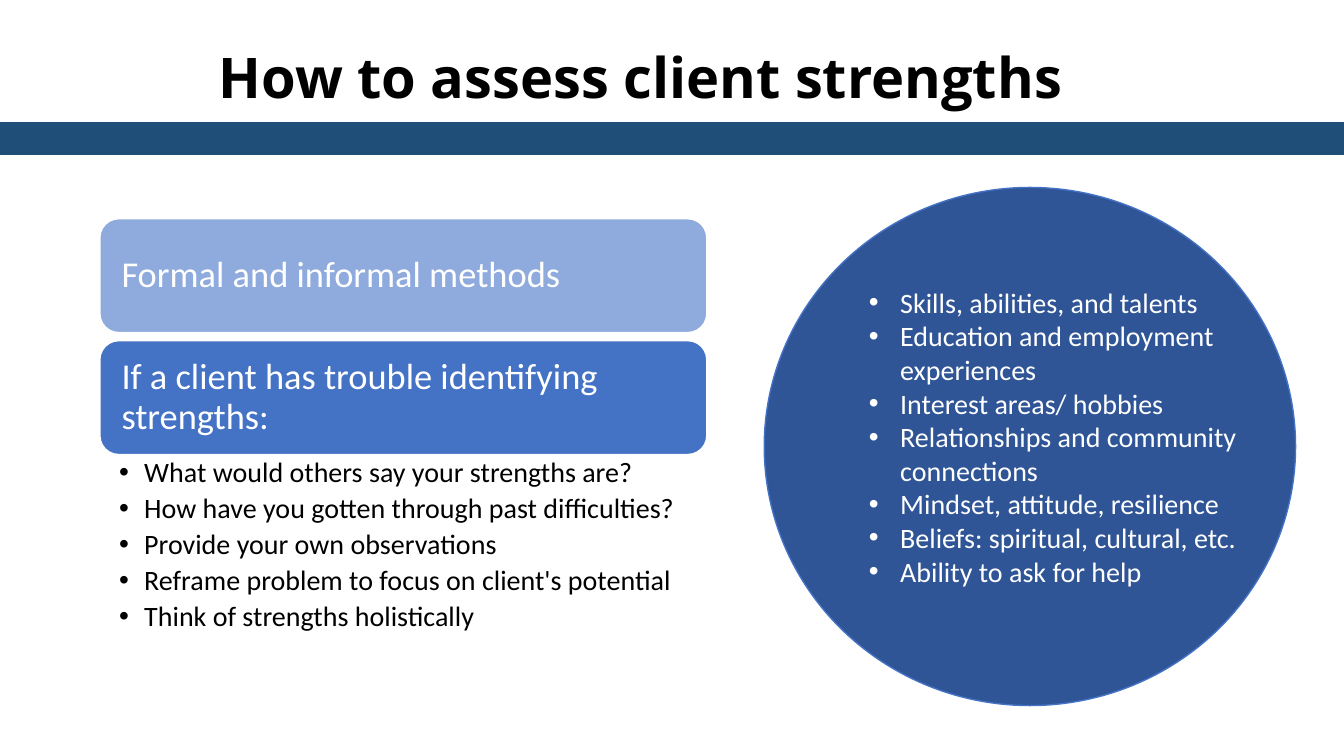
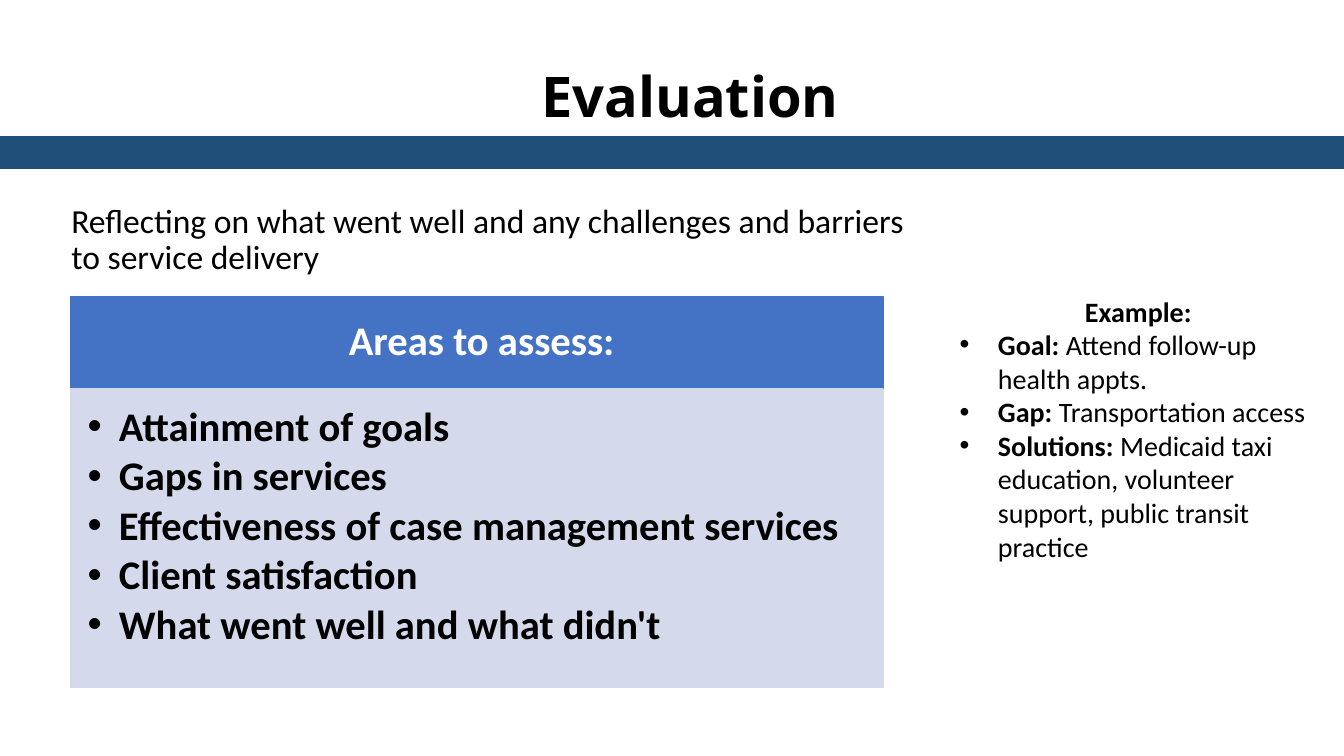
"""Two slides on assessing client strengths and evaluating services."""
from lxml import etree
from pptx import Presentation
from pptx.dml.color import RGBColor
from pptx.enum.shapes import MSO_SHAPE as Shape
from pptx.enum.text import MSO_ANCHOR as Anchor, MSO_AUTO_SIZE as AutoSize, PP_ALIGN as Align
from pptx.oxml.ns import qn
from pptx.util import Inches, Pt

BLACK, WHITE = "000000", "FFFFFF"
NAVY, BLUE, DEEP_BLUE = "1F4E79", "4472C4", "2F5597"
LIGHT_BLUE, PALE_BLUE = "8FAADC", "D4D9EC"
BODY_FONT, TITLE_FONT = "Calibri", "Open Sans"

METHODS = [
    ("Formal and informal methods", LIGHT_BLUE),
    ("If a client has trouble identifying strengths:", BLUE),
]
PROMPTS = [
    "What would others say your strengths are?",
    "How have you gotten through past difficulties?",
    "Provide your own observations",
    "Reframe problem to focus on client's potential",
    "Think of strengths holistically",
]
STRENGTHS = [
    "Skills, abilities, and talents",
    "Education and employment experiences",
    "Interest areas/ hobbies",
    "Relationships and community connections",
    "Mindset, attitude, resilience",
    "Beliefs: spiritual, cultural, etc.",
    "Ability to ask for help",
]
REFLECTION = "Reflecting on what went well and any challenges and barriers to service delivery"
AREAS = [
    "Attainment of goals",
    "Gaps in services",
    "Effectiveness of case management services",
    "Client satisfaction",
    "What went well and what didn't",
]
EXAMPLE = [
    ("Goal: ", "Attend follow-up health appts."),
    ("Gap: ", "Transportation access"),
    ("Solutions: ", "Medicaid taxi education, volunteer support, public transit practice"),
]


def rgb(code):
    return RGBColor.from_string(code)


def set_font(paragraph, size, color, bold=None, name=BODY_FONT):
    font = paragraph.font
    font.name, font.size, font.bold = name, Pt(size), bold
    font.color.rgb = rgb(color)


def add_bullet(paragraph, indent):
    properties = paragraph._p.get_or_add_pPr()
    properties.set("marL", str(Inches(indent)))
    properties.set("indent", str(-Inches(indent)))
    etree.SubElement(properties, qn("a:buFont")).set("typeface", "Arial")
    etree.SubElement(properties, qn("a:buChar")).set("char", "•")


def write(frame, items, size, color=BLACK, bold=None, indent=0, spacing=1.0, after=0,
          align=Align.LEFT, anchor=Anchor.TOP, insets=(0.1, 0.05, 0.1, 0.05)):
    """Fill a frame; an item that is a pair gets a bold lead and plain text."""
    frame.word_wrap = True
    frame.vertical_anchor = anchor
    (frame.margin_left, frame.margin_top,
     frame.margin_right, frame.margin_bottom) = map(Inches, insets)
    for number, item in enumerate(items):
        paragraph = frame.paragraphs[0] if number == 0 else frame.add_paragraph()
        if indent:
            add_bullet(paragraph, indent)
        paragraph.alignment = align
        paragraph.line_spacing = spacing
        paragraph.space_after = Pt(after)
        set_font(paragraph, size, color, bold)
        if isinstance(item, tuple):
            for text, strong in zip(item, (True, False)):
                run = paragraph.add_run()
                run.text, run.font.bold = text, strong
        else:
            paragraph.add_run().text = item


def add_block(slide, kind, box, fill, line=None):
    block = slide.shapes.add_shape(kind, *map(Inches, box))
    block.shadow.inherit = False
    block.fill.solid()
    block.fill.fore_color.rgb = rgb(fill)
    block.line.color.rgb = rgb(line or fill)
    block.line.width = Pt(1)
    return block.text_frame


def add_text(slide, box, items, size, **style):
    write(slide.shapes.add_textbox(*map(Inches, box)).text_frame, items, size, **style)


def add_slide(deck, title, title_box, band_top):
    slide = deck.slides.add_slide(deck.slide_layouts[5])
    heading = slide.shapes.title
    heading.left, heading.top, heading.width, heading.height = map(Inches, title_box)
    frame = heading.text_frame
    frame.text = title
    frame.auto_size = AutoSize.NONE
    frame.vertical_anchor = Anchor.MIDDLE
    paragraph = frame.paragraphs[0]
    paragraph.alignment = Align.LEFT
    paragraph.line_spacing = 0.9
    set_font(paragraph, 40, BLACK, True, TITLE_FONT)
    add_block(slide, Shape.RECTANGLE, (0, band_top, 13.33, 0.31), NAVY)
    return slide


def add_strengths_slide(deck):
    slide = add_slide(deck, "How to assess client strengths", (2.07, 0.07, 9.51, 1.45), 1.22)
    left, top, width, height, pitch = 0.99, 2.17, 6.02, 1.13, 1.21
    for row, (method, fill) in enumerate(METHODS):
        card = add_block(slide, Shape.ROUNDED_RECTANGLE,
                         (left, top + row * pitch, width, height), fill, WHITE)
        write(card, [method], 26, WHITE, spacing=0.9, anchor=Anchor.MIDDLE,
              insets=(0.16, 0.16, 0.16, 0.16))
    prompts_top = top + pitch + height
    add_text(slide, (left, prompts_top, width, 1.88), PROMPTS, 20, indent=0.25,
             spacing=0.9, after=4, insets=(0.19, 0.04, 0.2, 0.04))
    add_block(slide, Shape.OVAL, (7.58, 1.86, 5.27, 5.14), DEEP_BLUE, BLUE)
    add_text(slide, (8.52, 2.78, 4.15, 3.1), STRENGTHS, 20, color=WHITE, indent=0.31)


def add_evaluation_slide(deck):
    slide = add_slide(deck, "Evaluation", (5.27, 0.6, 3.23, 0.77), 1.36)
    add_text(slide, (0.61, 1.98, 8.67, 0.8), [REFLECTION], 24, spacing=0.9)
    left, top, width, header_height = 0.7, 2.94, 8.06, 0.92
    header = add_block(slide, Shape.RECTANGLE, (left, top, width, header_height), BLUE)
    write(header, ["Areas to assess:"], 29, WHITE, True, spacing=0.9, align=Align.CENTER,
          anchor=Anchor.MIDDLE, insets=(0.33, 0.13, 0.23, 0.13))
    areas = add_block(slide, Shape.RECTANGLE,
                      (left, top + header_height, width, 2.96), PALE_BLUE)
    write(areas, AREAS, 29, bold=True, indent=0.31, spacing=0.9, after=4,
          insets=(0.17, 0.17, 0.23, 0.25))
    example_left, example_top, example_width, line_height = 9.42, 2.87, 3.74, 0.33
    add_text(slide, (example_left, example_top, example_width, 0.43), ["Example:"], 20,
             bold=True, align=Align.CENTER)
    add_text(slide, (example_left, example_top + line_height, example_width, 2.46),
             EXAMPLE, 20, indent=0.38)


def main():
    deck = Presentation()
    deck.slide_width, deck.slide_height = Inches(13.33), Inches(7.5)
    add_strengths_slide(deck)
    add_evaluation_slide(deck)
    deck.save("out.pptx")


if __name__ == "__main__":
    main()
